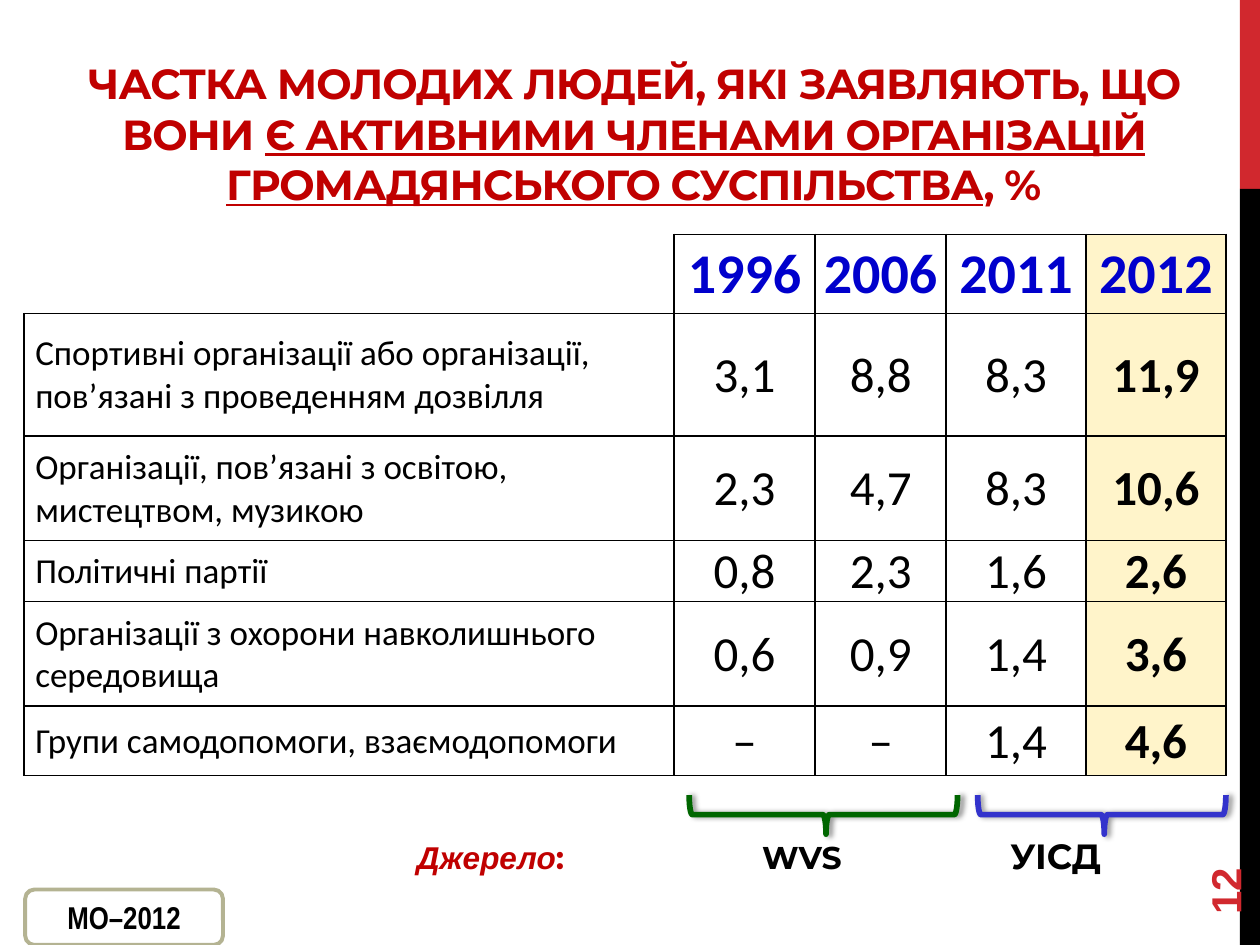
import pptx
import pptx.util
import pptx.oxml
import pptx.oxml.ns
import pptx.dml.color
import pptx.enum.shapes
import pptx.enum.text

Inches, Pt = pptx.util.Inches, pptx.util.Pt
ALIGN, ANCHOR = pptx.enum.text.PP_ALIGN, pptx.enum.text.MSO_ANCHOR
SHAPE = pptx.enum.shapes.MSO_SHAPE
NAMESPACE = pptx.oxml.ns.nsdecls("a")

COLORS = {
    "white": "FFFFFF", "black": "000000", "accent": "D1282E", "heading": "C00000",
    "year": "0000CC", "highlight": "FFF4CA", "badge": "B4B392",
    "green": "006600", "blue": "3333CC",
}
TITLE = [
    ("ЧАСТКА МОЛОДИХ ЛЮДЕЙ, ЯКІ ЗАЯВЛЯЮТЬ, ЩО ВОНИ ", False),
    ("Є АКТИВНИМИ ЧЛЕНАМИ ОРГАНІЗАЦІЙ ГРОМАДЯНСЬКОГО СУСПІЛЬСТВА", True),
    (", %", False),
]
TABLE = [
    ["", "1996", "2006", "2011", "2012"],
    ["Спортивні організації або організації, пов’язані з проведенням дозвілля",
     "3,1", "8,8", "8,3", "11,9"],
    ["Організації, пов’язані з освітою, мистецтвом, музикою", "2,3", "4,7", "8,3", "10,6"],
    ["Політичні партії", "0,8", "2,3", "1,6", "2,6"],
    ["Організації з охорони навколишнього середовища", "0,6", "0,9", "1,4", "3,6"],
    ["Групи самодопомоги, взаємодопомоги", "–", "–", "1,4", "4,6"],
]
COLUMN_WIDTHS = [5.16, 1.12, 1.04, 1.11, 1.11]
ROW_HEIGHTS = [0.63, 0.97, 0.83, 0.42, 0.83, 0.55]
SOURCE_TABS = [2.91, 5.65, 7.62]
SOURCE_RUNS = [
    ("\tДжерело", dict(font="Arial", color="heading", italic=True)),
    (":", dict(font="Montserrat", color="heading")),
    ("\tWVS", dict(font="Montserrat")),
    ("\tУІСД", dict(font="Montserrat", size=20)),
]
BRACES = [(6.38, 5.4, 0.31, 2.13, "green"), (8.59, 5.48, 0.31, 1.97, "blue")]


def rgb(name):
    return pptx.dml.color.RGBColor.from_string(COLORS[name])


def box(left, top, width, height):
    return [Inches(length) for length in (left, top, width, height)]


def add_run(paragraph, text, font="Calibri", size=18, color="black",
            bold=True, italic=False, underline=False):
    run = paragraph.add_run()
    run.text = text
    run.font.name, run.font.size = font, Pt(size)
    run.font.bold, run.font.italic, run.font.underline = bold, italic, underline
    run.font.color.rgb = rgb(color)
    return run


def add_shape(slide, kind, place, fill=None, line=None, line_width=1):
    shape = slide.shapes.add_shape(kind, *box(*place))
    shape.shadow.inherit = False
    if fill:
        shape.fill.solid()
        shape.fill.fore_color.rgb = rgb(fill)
    else:
        shape.fill.background()
    if line:
        shape.line.color.rgb = rgb(line)
        shape.line.width = Pt(line_width)
    else:
        shape.line.fill.background()
    return shape


def set_borders(cell, visible):
    properties = cell._tc.get_or_add_tcPr()
    for side in "LRTB":
        fill = (f'<a:solidFill><a:srgbClr val="{COLORS["black"]}"/></a:solidFill>'
                if side in visible else "<a:noFill/>")
        properties.append(pptx.oxml.parse_xml(
            f'<a:ln{side} {NAMESPACE} w="{Pt(1)}">{fill}</a:ln{side}>'))


def add_title(slide):
    title = slide.shapes.title
    title.left, title.top, title.width, title.height = box(0.53, 0.36, 9, 1.35)
    frame = title.text_frame
    frame.auto_size = pptx.enum.text.MSO_AUTO_SIZE.NONE
    frame.vertical_anchor = ANCHOR.BOTTOM
    paragraph = frame.paragraphs[0]
    paragraph.alignment = ALIGN.CENTER
    for text, underline in TITLE:
        run = add_run(paragraph, text, font="Montserrat", size=24, color="heading",
                      underline=underline)
        run.font._element.set("spc", "-60")


def add_table(slide):
    frame = slide.shapes.add_table(
        len(TABLE), len(COLUMN_WIDTHS),
        *box(0.19, 1.86, sum(COLUMN_WIDTHS), sum(ROW_HEIGHTS)))
    table = frame.table
    table.first_row = table.horz_banding = False
    for column, width in zip(table.columns, COLUMN_WIDTHS):
        column.width = Inches(width)
    for row, height in zip(table.rows, ROW_HEIGHTS):
        row.height = Inches(height)
    last = len(COLUMN_WIDTHS) - 1
    for row_index, row in enumerate(TABLE):
        for column_index, text in enumerate(row):
            cell = table.cell(row_index, column_index)
            set_borders(cell, "LRTB" if text else "RB")
            cell.fill.solid()
            cell.fill.fore_color.rgb = rgb("highlight" if column_index == last else "white")
            cell.vertical_anchor = ANCHOR.MIDDLE
            cell.margin_left = cell.margin_right = cell.margin_top = Inches(0.01)
            cell.margin_bottom = 0
            if not text:
                continue
            paragraph = cell.text_frame.paragraphs[0]
            if column_index == 0:
                paragraph._p.get_or_add_pPr().set("marL", str(Inches(0.08)))
                add_run(paragraph, text, size=20, bold=False)
                continue
            paragraph.alignment = ALIGN.CENTER
            if row_index == 0:
                add_run(paragraph, text, size=32, color="year")
            else:
                add_run(paragraph, text, size=28, bold=column_index == last)


def add_source_line(slide):
    frame = slide.shapes.add_textbox(*box(0.3, 6.57, 9.45, 0.44)).text_frame
    frame.word_wrap = True
    paragraph = frame.paragraphs[0]
    stops = "".join(f'<a:tab pos="{Inches(stop)}" algn="l"/>' for stop in SOURCE_TABS)
    paragraph._p.get_or_add_pPr().append(
        pptx.oxml.parse_xml(f"<a:tabLst {NAMESPACE}>{stops}</a:tabLst>"))
    for text, style in SOURCE_RUNS:
        add_run(paragraph, text, **style)


def add_brace(slide, left, top, width, height, color):
    brace = add_shape(slide, SHAPE.LEFT_BRACE, (left, top, width, height),
                      line=color, line_width=3.25)
    brace.rotation = 270
    brace.adjustments[0], brace.adjustments[1] = 0.083, 0.51
    effects = brace._element.spPr.find(pptx.oxml.ns.qn("a:effectLst"))
    effects.append(pptx.oxml.parse_xml(
        f'<a:outerShdw {NAMESPACE} blurRad="{Pt(3.1)}" dist="{Pt(1.8)}" dir="0" '
        f'rotWithShape="0"><a:srgbClr val="{COLORS["black"]}"><a:alpha val="40000"/>'
        '</a:srgbClr></a:outerShdw>'))


def add_badge(slide):
    badge = add_shape(slide, SHAPE.ROUNDED_RECTANGLE, (0.2, 7.06, 1.57, 0.44),
                      fill="white", line="badge", line_width=2.25)
    badge.text_frame.vertical_anchor = ANCHOR.MIDDLE
    paragraph = badge.text_frame.paragraphs[0]
    paragraph.alignment = ALIGN.CENTER
    add_run(paragraph, "МО–2012", font="Arial Narrow")


def add_page_number(slide):
    number = slide.shapes.add_textbox(*box(9, 6.44, 1.44, 0.4))
    number.rotation = 270
    number.text_frame.word_wrap = True
    number.text_frame.vertical_anchor = ANCHOR.MIDDLE
    add_run(number.text_frame.paragraphs[0], "12", font="Arial", size=24, color="accent")


def main():
    presentation = pptx.Presentation()
    presentation.slide_width, presentation.slide_height = Inches(10), Inches(7.5)
    slide = presentation.slides.add_slide(presentation.slide_layouts[5])
    add_shape(slide, SHAPE.RECTANGLE, (9.84, 0, 0.16, 1.5), fill="accent")
    add_shape(slide, SHAPE.RECTANGLE, (9.84, 1.5, 0.16, 6), fill="black")
    add_title(slide)
    add_table(slide)
    add_source_line(slide)
    add_badge(slide)
    for brace in BRACES:
        add_brace(slide, *brace)
    add_page_number(slide)
    presentation.save("out.pptx")


if __name__ == "__main__":
    main()
